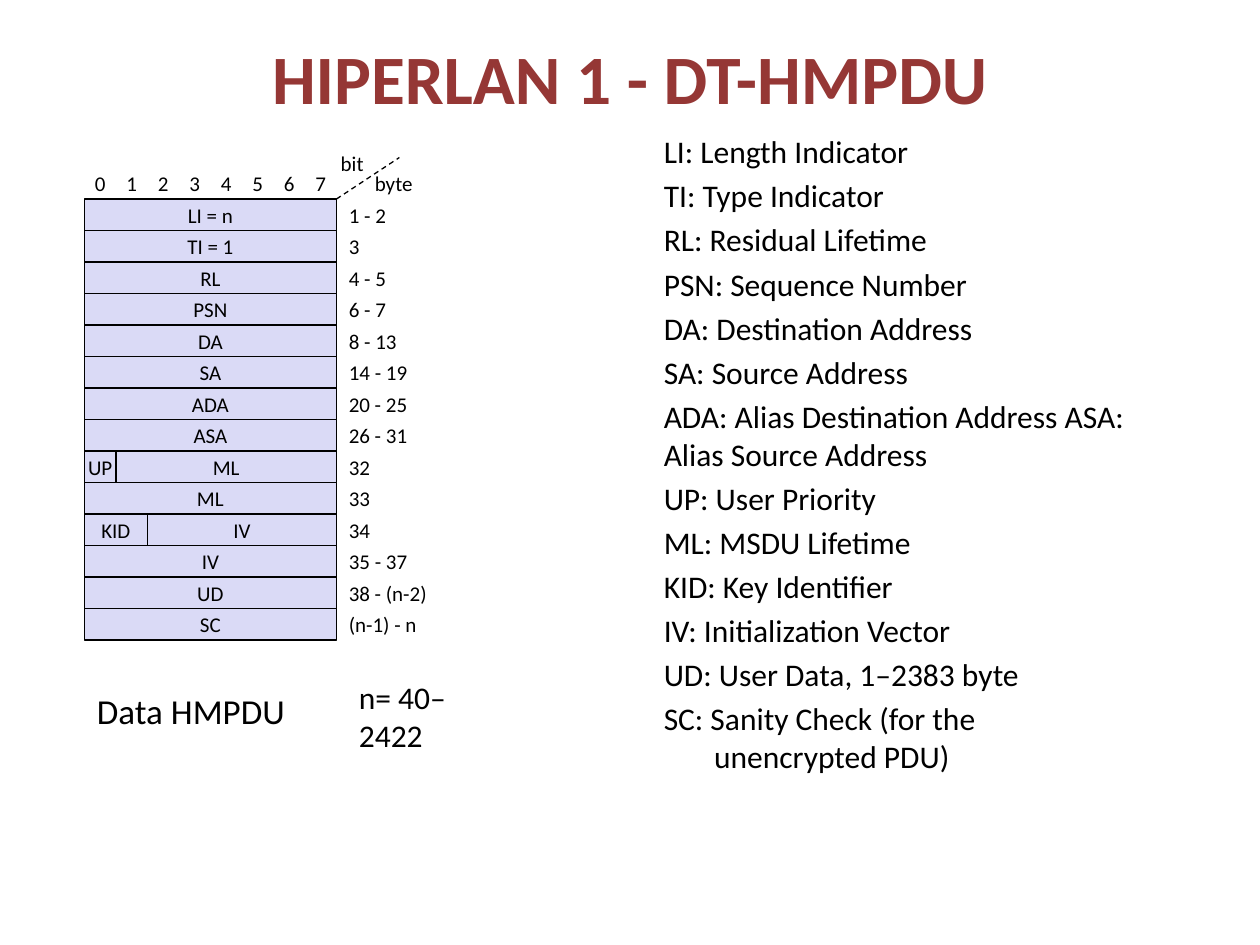
from dataclasses import dataclass

from lxml import etree
from pptx import Presentation
from pptx.dml.color import RGBColor
from pptx.enum.dml import MSO_LINE
from pptx.enum.shapes import MSO_CONNECTOR, MSO_SHAPE
from pptx.enum.text import MSO_ANCHOR as Anchor, PP_ALIGN as Align
from pptx.oxml.ns import qn
from pptx.util import Inches, Pt


@dataclass(frozen=True)
class Theme:
    font: str = "Calibri"
    ink: RGBColor = RGBColor(0x00, 0x00, 0x00)
    heading: RGBColor = RGBColor(0x95, 0x37, 0x35)
    field: RGBColor = RGBColor(0xDA, 0xDA, 0xF6)
    title_size: float = 39.6
    caption_size: float = 20
    body_size: float = 18
    field_size: float = 12
    line_width: float = 0.75


THEME = Theme()
CELL = 0.25
BITS = 8

FRAME_ROWS = [
    ([("LI = n", 8)], "1 - 2", 0.25),
    ([("TI = 1", 8)], "3", 0.25),
    ([("RL", 8)], "4 - 5", 0.5),
    ([("PSN", 8)], "6 - 7", 0.58),
    ([("DA", 8)], "8 - 13", 0.67),
    ([("SA", 8)], "14 - 19", 1.25),
    ([("ADA", 8)], "20 - 25", 1.67),
    ([("ASA", 8)], "26 - 31", 1.67),
    ([("UP", 1), ("ML", 7)], "32", 0.5),
    ([("ML", 8)], "33", 0.58),
    ([("KID", 2), ("IV", 6)], "34", 0.67),
    ([("IV", 8)], "35 - 37", 1.25),
    ([("UD", 8)], "38 - (n-2)", 1.67),
    ([("SC", 8)], "(n-1) - n", 1.67),
]

GLOSSARY = [
    "LI: Length Indicator",
    "TI: Type Indicator",
    "RL: Residual Lifetime",
    "PSN: Sequence Number",
    "DA: Destination Address",
    "SA: Source Address",
    "ADA: Alias Destination Address ASA: Alias Source Address",
    "UP: User Priority",
    "ML: MSDU Lifetime",
    "KID: Key Identifier",
    "IV: Initialization Vector",
    "UD: User Data, 1–2383 byte",
    "SC: Sanity Check (for the\vunencrypted PDU)",
]


def write(paragraph, text, size, color=THEME.ink, bold=False, align=Align.LEFT):
    paragraph.text = text
    paragraph.alignment = align
    style = {"name": THEME.font, "size": Pt(size), "bold": bold}
    for run in paragraph.runs:
        for attribute, value in style.items():
            setattr(run.font, attribute, value)
        run.font.color.rgb = color


def add_text(slide, box, text, size, anchor=Anchor.TOP, **style):
    frame = slide.shapes.add_textbox(*map(Inches, box)).text_frame
    frame.word_wrap = True
    frame.vertical_anchor = anchor
    write(frame.paragraphs[0], text, size, **style)
    return frame


def add_label(slide, box, text, align=Align.CENTER):
    label = slide.shapes.add_shape(MSO_SHAPE.RECTANGLE, *map(Inches, box))
    label.shadow.inherit = False
    label.fill.background()
    label.line.fill.background()
    label.text_frame.word_wrap = False
    label.text_frame.vertical_anchor = Anchor.MIDDLE
    write(label.text_frame.paragraphs[0], text, THEME.field_size, align=align)
    return label


def add_field(slide, box, text):
    field = add_label(slide, box, text)
    field.fill.solid()
    field.fill.fore_color.rgb = THEME.field
    field.line.color.rgb = THEME.ink
    field.line.width = Pt(THEME.line_width)


def add_title(slide, box):
    add_text(slide, box, "HIPERLAN 1 - DT-HMPDU", THEME.title_size, Anchor.MIDDLE,
             color=THEME.heading, bold=True, align=Align.CENTER)


def add_glossary(slide, box):
    frame = add_text(slide, box, GLOSSARY[0], THEME.body_size)
    for entry in GLOSSARY[1:]:
        write(frame.add_paragraph(), entry, THEME.body_size)
    for paragraph in frame.paragraphs:
        paragraph.space_before = Pt(THEME.body_size * 0.2)
    hanging = frame.paragraphs[-1]._p.get_or_add_pPr()
    hanging.set("marL", str(Inches(0.4)))
    hanging.set("indent", str(-Inches(0.4)))


def add_axis_header(slide, left, bottom):
    top = bottom - CELL
    right = left + BITS * CELL
    for bit in range(BITS):
        add_label(slide, (left + bit * CELL, top, CELL, CELL), str(bit))
    add_label(slide, (right, 1.17, CELL, CELL), "bit")
    add_label(slide, (right + 0.33, top, CELL, CELL), "byte")
    divider = slide.shapes.add_connector(
        MSO_CONNECTOR.STRAIGHT,
        *map(Inches, (right, bottom, right + 0.5, bottom - 0.33)))
    divider.line.color.rgb = THEME.ink
    divider.line.width = Pt(THEME.line_width)
    divider.line.dash_style = MSO_LINE.DASH
    etree.SubElement(divider._element.spPr, qn("a:effectLst"))


def add_frame_layout(slide, left, top):
    add_axis_header(slide, left, top)
    for index, (fields, byte_range, range_width) in enumerate(FRAME_ROWS):
        row_top = top + index * CELL
        field_left = left
        for name, bits in fields:
            add_field(slide, (field_left, row_top, bits * CELL, CELL), name)
            field_left += bits * CELL
        add_label(slide, (field_left, row_top, range_width, CELL), byte_range,
                  Align.LEFT)


def add_captions(slide, left, top):
    add_text(slide, (left, top, 1.89, 0.43), "Data HMPDU", THEME.caption_size)
    add_text(slide, (left + 2.08, top - 0.09, 1.38, 0.37), "n= 40–2422",
             THEME.body_size)


def main():
    deck = Presentation()
    deck.slide_width, deck.slide_height = Inches(10), Inches(7.5)
    slide = deck.slides.add_slide(deck.slide_layouts[6])
    add_title(slide, (0.5, 0.3, 9, 0.62))
    add_glossary(slide, (5.17, 1, 4.17, 5.58))
    add_frame_layout(slide, 0.67, 1.58)
    add_captions(slide, 0.67, 5.42)
    deck.save("out.pptx")


if __name__ == "__main__":
    main()
